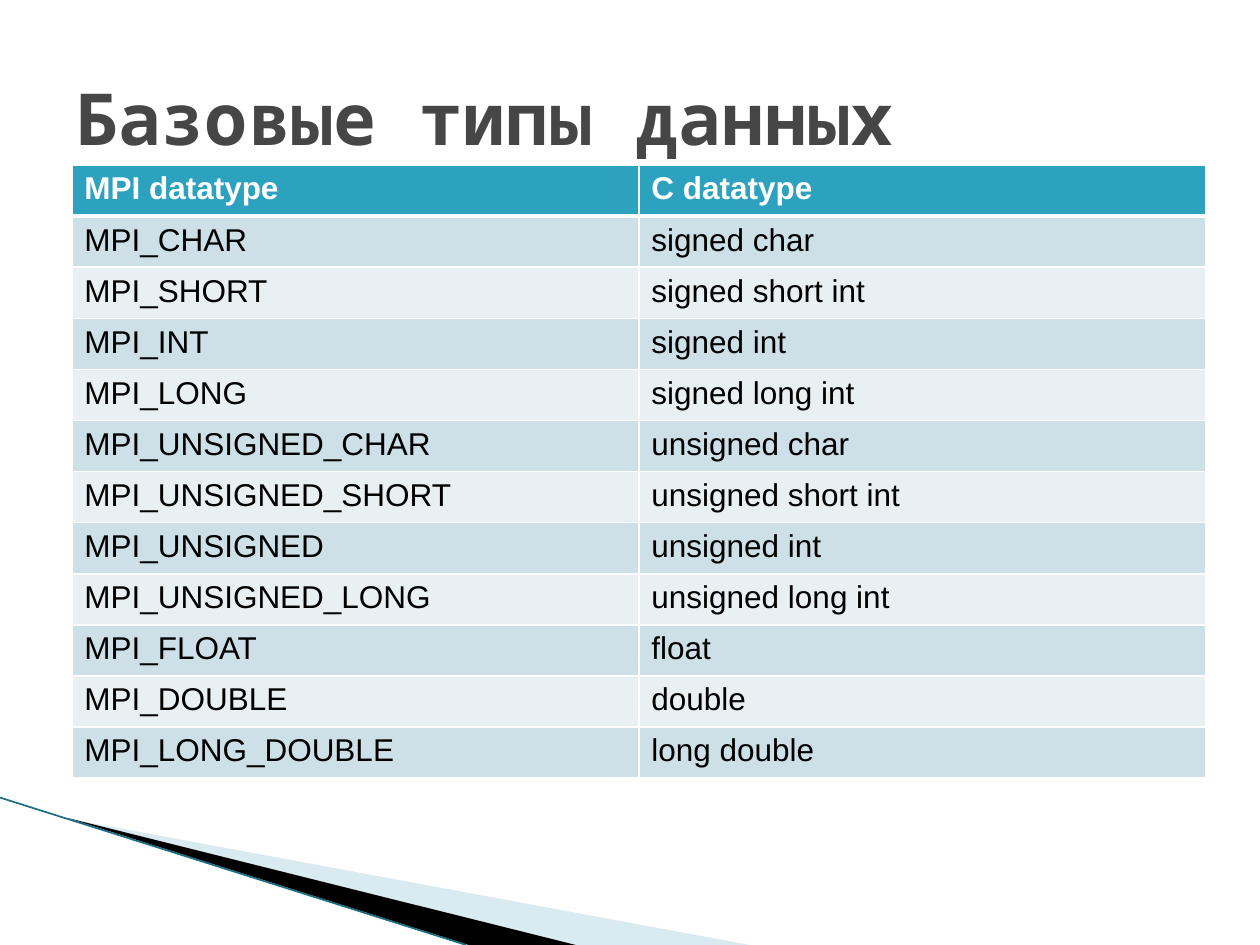
from lxml import etree
from pptx import Presentation, util as u
from pptx.dml.color import RGBColor
from pptx.enum import shapes, text
from pptx.oxml.ns import qn

WHITE = RGBColor(0xFF, 0xFF, 0xFF)
BLACK = RGBColor(0, 0, 0)
TITLE_GREY = RGBColor(0x46, 0x46, 0x46)
HEADER_TEAL = RGBColor(0x2D, 0xA2, 0xBF)
BANDS = (RGBColor(0xCD, 0xE0, 0xE8), RGBColor(0xE8, 0xF0, 0xF4))
PALE_BLUE = RGBColor(0xA0, 0xCB, 0xDC)
EDGE_TEAL = RGBColor(0x1A, 0x6E, 0x82)

DATATYPES = [
    ("MPI datatype", "C datatype"),
    ("MPI_CHAR", "signed char"),
    ("MPI_SHORT", "signed short int"),
    ("MPI_INT", "signed int"),
    ("MPI_LONG", "signed long int"),
    ("MPI_UNSIGNED_CHAR", "unsigned char"),
    ("MPI_UNSIGNED_SHORT", "unsigned short int"),
    ("MPI_UNSIGNED", "unsigned int"),
    ("MPI_UNSIGNED_LONG", "unsigned long int"),
    ("MPI_FLOAT", "float"),
    ("MPI_DOUBLE", "double"),
    ("MPI_LONG_DOUBLE", "long double"),
]


def style_run(run, size, font, color, bold):
    run.font.size = u.Pt(size)
    run.font.name = font
    run.font.color.rgb = color
    run.font.bold = bold


def add_wedge(slide, corners, color, opacity=100):
    points = [(u.Inches(x), u.Inches(y)) for x, y in corners]
    builder = slide.shapes.build_freeform(*points[0])
    builder.add_line_segments(points[1:])
    wedge = builder.convert_to_shape()
    wedge.shadow.inherit = False
    wedge.fill.solid()
    wedge.fill.fore_color.rgb = color
    wedge.line.fill.background()
    if opacity < 100:
        fill_color = wedge._element.spPr.find(".//" + qn("a:srgbClr"))
        etree.SubElement(fill_color, qn("a:alpha"), val=str(opacity * 1000))


def add_edge(slide, start, end):
    edge = slide.shapes.add_connector(
        shapes.MSO_CONNECTOR.STRAIGHT, *(u.Inches(v) for v in start + end))
    edge.line.color.rgb = EDGE_TEAL
    edge.line.width = u.Pt(0.95)
    etree.SubElement(edge._element.spPr, qn("a:effectLst"))


def set_borders(cell, widths):
    """Draw white borders; widths are points for left, right, top, bottom."""
    properties = cell._tc.get_or_add_tcPr()
    for position, (side, width) in enumerate(zip("LRTB", widths)):
        border = etree.Element(qn(f"a:ln{side}"), w=str(u.Pt(width)))
        fill = etree.SubElement(border, qn("a:solidFill"))
        etree.SubElement(fill, qn("a:srgbClr"), val=str(WHITE))
        properties.insert(position, border)


def add_datatype_table(slide):
    table = slide.shapes.add_table(
        len(DATATYPES), 2, u.Inches(0.57), u.Inches(1.31),
        u.Inches(9), u.Inches(4.87)).table
    for row, names in enumerate(DATATYPES):
        header = row == 0
        for column, name in enumerate(names):
            cell = table.cell(row, column)
            cell.text_frame.text = name
            style_run(cell.text_frame.paragraphs[0].runs[0], 18, "Arial",
                      WHITE if header else BLACK, header)
            cell.fill.solid()
            cell.fill.fore_color.rgb = HEADER_TEAL if header else BANDS[(row - 1) % 2]
            set_borders(cell, (1, 1, 3 if row == 1 else 1, 3 if header else 1))


def set_title(slide, wording):
    title = slide.shapes.title
    title.left, title.top = u.Inches(0.5), u.Inches(0.3)
    title.width, title.height = u.Inches(9), u.Inches(1.25)
    frame = title.text_frame
    frame.text = wording
    frame.word_wrap = True
    frame.auto_size = text.MSO_AUTO_SIZE.NONE
    frame.vertical_anchor = text.MSO_ANCHOR.MIDDLE
    frame.paragraphs[0].alignment = text.PP_ALIGN.LEFT
    style_run(frame.paragraphs[0].runs[0], 41, "Noto Sans Mono", TITLE_GREY, True)


def main():
    deck = Presentation()
    deck.slide_width, deck.slide_height = u.Inches(10), u.Inches(7.5)
    slide = deck.slides.add_slide(deck.slide_layouts[5])
    add_wedge(slide, [(0.55, 6.5), (5.95, 7.5), (4.56, 7.5)], PALE_BLUE, 40)
    add_wedge(slide, [(0.53, 6.49), (4.57, 7.5), (3.72, 7.5)], BLACK)
    add_edge(slide, (0, 6.33), (3.7, 7.5))
    add_datatype_table(slide)
    set_title(slide, "Базовые типы данных")
    deck.save("out.pptx")


if __name__ == "__main__":
    main()
